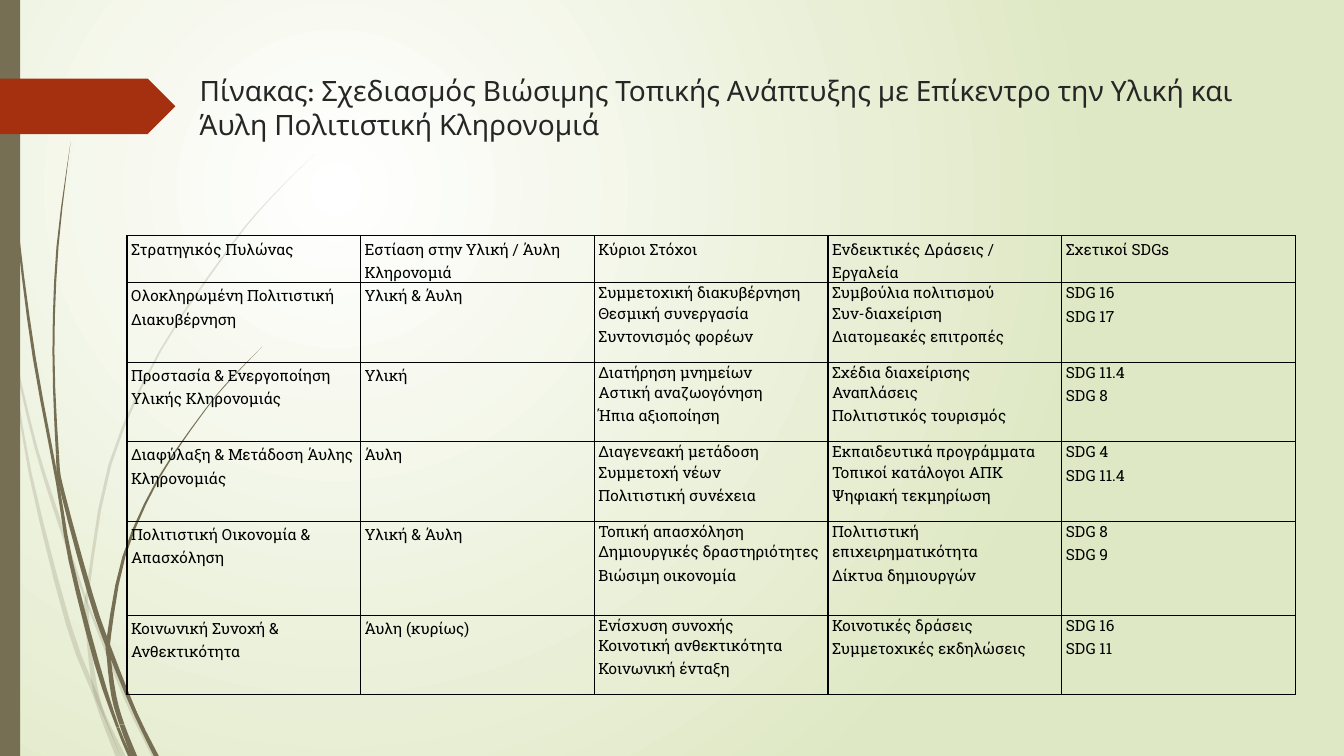
from lxml import etree
from pptx import Presentation
from pptx.dml.color import RGBColor
from pptx.enum.shapes import MSO_SHAPE
from pptx.enum.text import MSO_ANCHOR, PP_ALIGN
from pptx.oxml.ns import qn
from pptx.util import Inches, Pt

RECTANGLE, PENTAGON = MSO_SHAPE.RECTANGLE, MSO_SHAPE.PENTAGON
TOP, LEFT = MSO_ANCHOR.TOP, PP_ALIGN.LEFT
COLORS = {"glow": "FFFFFF", "edge": "DFE8C4", "stem": "766F54",
          "marker": "A53010", "title": "262626", "ink": "000000"}
TITLE_FONT, TABLE_FONT = "League Spartan", "Roboto Slab"
TITLE = ("Πίνακας: Σχεδιασμός Βιώσιμης Τοπικής Ανάπτυξης με Επίκεντρο "
         "την Υλική και Άυλη Πολιτιστική Κληρονομιά")

# Grass blades: joints (point numbers where a new piece starts), then the
# centre line points with the width there (x, y, width)
PALE_BLADES = [
    ([2, 6], [(0, 2.9, .03), (.07, 3.24, .02), (.11, 3.5, .01),
              (.3, 4.7, .03), (.68, 6.2, .05), (.94, 6.88, .05),
              (1.03, 7.14, .05), (1.17, 7.5, .05)]),
    ([4, 5], [(.14, 3.45, 0), (.17, 3.65, .02), (.36, 4.45, .03),
              (.6, 5.21, .04), (.84, 5.92, .02), (.88, 6.02, .02),
              (1.25, 6.93, .04), (1.53, 7.5, .05)]),
    ([5, 6, 9], [(3.12, 1.53, 0), (2.68, 1.97, .01), (2.29, 2.44, .02),
                 (1.59, 3.48, .02), (1.09, 4.61, .03), (.87, 5.86, .03),
                 (.86, 6.05, .04), (.89, 6.46, .04), (.95, 6.86, .05),
                 (1.04, 7.11, .03), (1.22, 7.5, .05)]),
]
DARK_BLADES = [
    ([4, 7], [(.04, 0, .01), (.07, 1.1, .01), (.18, 2.33, .02),
              (.34, 3.55, .03), (.57, 4.79, .03), (.7, 5.56, .04),
              (.96, 6.58, .05), (1.17, 7.22, .03), (1.29, 7.5, .04)]),
    ([3, 4, 6], [(.7, 1.41, 0), (.57, 2.45, .02), (.53, 3.49, .02),
                 (.57, 4.51, .03), (.62, 4.88, .04), (.9, 5.91, .05),
                 (1.08, 6.43, .05), (1.34, 7.07, .04), (1.55, 7.5, .05)]),
    ([5, 6, 8], [(2.6, 3.44, 0), (2.31, 3.74, .01), (2.04, 4.06, .01),
                 (1.57, 4.75, .02), (1.23, 5.52, .03), (1.08, 6.32, .04),
                 (1.08, 6.53, .04), (1.13, 6.91, .05), (1.21, 7.19, .05),
                 (1.33, 7.5, .06)]),
]

ROW_HEIGHTS = [.39, .79, .79, .79, .93, .79]
ROWS = [
    ["Στρατηγικός Πυλώνας", "Εστίαση στην Υλική / Άυλη Κληρονομιά",
     "Κύριοι Στόχοι", "Ενδεικτικές Δράσεις / Εργαλεία", "Σχετικοί SDGs"],
    ["Ολοκληρωμένη Πολιτιστική Διακυβέρνηση", "Υλική & Άυλη",
     "Συμμετοχική διακυβέρνηση\nΘεσμική συνεργασία\nΣυντονισμός φορέων",
     "Συμβούλια πολιτισμού\nΣυν-διαχείριση\nΔιατομεακές επιτροπές",
     "SDG 16\nSDG 17"],
    ["Προστασία & Ενεργοποίηση Υλικής Κληρονομιάς", "Υλική",
     "Διατήρηση μνημείων\nΑστική αναζωογόνηση\nΉπια αξιοποίηση",
     "Σχέδια διαχείρισης\nΑναπλάσεις\nΠολιτιστικός τουρισμός",
     "SDG 11.4\nSDG 8"],
    ["Διαφύλαξη & Μετάδοση Άυλης Κληρονομιάς", "Άυλη",
     "Διαγενεακή μετάδοση\nΣυμμετοχή νέων\nΠολιτιστική συνέχεια",
     "Εκπαιδευτικά προγράμματα\nΤοπικοί κατάλογοι ΑΠΚ\nΨηφιακή τεκμηρίωση",
     "SDG 4\nSDG 11.4"],
    ["Πολιτιστική Οικονομία & Απασχόληση", "Υλική & Άυλη",
     "Τοπική απασχόληση\nΔημιουργικές δραστηριότητες\nΒιώσιμη οικονομία",
     "Πολιτιστική επιχειρηματικότητα\nΔίκτυα δημιουργών",
     "SDG 8\nSDG 9"],
    ["Κοινωνική Συνοχή & Ανθεκτικότητα", "Άυλη (κυρίως)",
     "Ενίσχυση συνοχής\nΚοινοτική ανθεκτικότητα\nΚοινωνική ένταξη",
     "Κοινοτικές δράσεις\nΣυμμετοχικές εκδηλώσεις",
     "SDG 16\nSDG 11"],
]


def color(name):
    return RGBColor.from_string(COLORS[name])


def paint(shape, name, alpha=None):
    shape.shadow.inherit = False
    shape.fill.solid()
    shape.fill.fore_color.rgb = color(name)
    shape.line.fill.background()
    if alpha is not None:
        tone = shape.fill._xPr.find(qn("a:solidFill"))[0]
        etree.SubElement(tone, qn("a:alpha"), val=str(alpha * 1000))


def set_background(page):
    fill = page.background.fill
    fill.gradient()
    for stop, name in zip(fill.gradient_stops, ("glow", "edge")):
        stop.color.rgb = color(name)
    gradient = next(page.element.iter(qn("a:gradFill")))
    gradient.remove(gradient.find(qn("a:lin")))
    circle = etree.SubElement(gradient, qn("a:path"), path="circle")
    etree.SubElement(circle, qn("a:fillToRect"),
                     l="50000", t="50000", r="100000", b="100000")


def smooth_line(points, steps):
    """Catmull-Rom curve through all points."""
    padded = [points[0], *points, points[-1]]
    curve = []
    for a, b, c, d in zip(padded, padded[1:], padded[2:], padded[3:]):
        for step in range(steps):
            t = step / steps
            curve.append(tuple(
                q + t * (r - p + t * (2 * p - 5 * q + 4 * r - s
                                      + t * (3 * q - p - 3 * r + s))) / 2
                for p, q, r, s in zip(a, b, c, d)))
    return curve + [points[-1]]


def add_piece(page, curve, alpha):
    right = [(x + width / 2, y) for x, y, width in curve]
    left = [(x - width / 2, y) for x, y, width in curve]
    outline = [(Inches(max(x, 0)), Inches(y)) for x, y in right + left[::-1]]
    builder = page.shapes.build_freeform(*outline[0])
    builder.add_line_segments(outline[1:], close=True)
    paint(builder.convert_to_shape(), "stem", alpha)


def add_blade(page, joints, points, alpha=None, steps=3):
    curve = smooth_line(points, steps)
    ends = [0, *joints, len(points) - 1]
    for start, end in zip(ends, ends[1:]):
        add_piece(page, curve[start * steps:end * steps + 1], alpha)


def add_block(page, kind, left, top, width, height, name):
    block = page.shapes.add_shape(kind, Inches(left), Inches(top),
                                  Inches(width), Inches(height))
    paint(block, name)


def style_span(span, font, size, name):
    span.font.name = font
    span.font.size = Pt(size)
    span.font.color.rgb = color(name)


def set_title(page):
    box = page.shapes.title
    box.left, box.top = Inches(1.88), Inches(.68)
    box.width, box.height = Inches(10.7), Inches(1.4)
    box.text_frame.text = TITLE
    box.text_frame.vertical_anchor = TOP
    para = box.text_frame.paragraphs[0]
    para.alignment = LEFT
    style_span(para.runs[0], TITLE_FONT, 20, "title")


def set_borders(cell):
    properties = cell._tc.get_or_add_tcPr()
    for index, side in enumerate(("a:lnL", "a:lnR", "a:lnT", "a:lnB")):
        line = etree.Element(qn(side), w=str(Pt(1)))
        fill = etree.SubElement(line, qn("a:solidFill"))
        etree.SubElement(fill, qn("a:srgbClr"), val=COLORS["ink"])
        properties.insert(index, line)


def fill_cell(cell, text):
    cell.fill.background()
    cell.margin_left = cell.margin_right = Inches(.04)
    cell.margin_top = cell.margin_bottom = 0
    para = cell.text_frame.paragraphs[0]
    para.line_spacing = 1.15
    para.space_after = Pt(10)
    span = para.add_run()
    span.text = text
    style_span(span, TABLE_FONT, 11, "ink")
    set_borders(cell)


def add_pillar_table(page):
    frame = page.shapes.add_table(len(ROWS), len(ROWS[0]), Inches(1.26),
                                  Inches(2.34), Inches(11.59), Inches(4.48))
    table = frame.table
    table.first_row = table.horz_banding = False
    for row, height, texts in zip(table.rows, ROW_HEIGHTS, ROWS):
        row.height = Inches(height)
        for cell, text in zip(row.cells, texts):
            fill_cell(cell, text)


def main():
    deck = Presentation()
    deck.slide_width, deck.slide_height = Inches(13.33), Inches(7.5)
    page = deck.slides.add_slide(deck.slide_layouts[5])
    set_background(page)
    # Decoration on the left edge
    for joints, points in PALE_BLADES:
        add_blade(page, joints, points, alpha=20)
    for joints, points in DARK_BLADES:
        add_blade(page, joints, points)
    add_block(page, RECTANGLE, 0, 0, .2, 7.5, "stem")
    add_block(page, PENTAGON, 0, .78, 1.74, .55, "marker")
    # Content
    set_title(page)
    add_pillar_table(page)
    deck.save("out.pptx")


if __name__ == "__main__":
    main()
